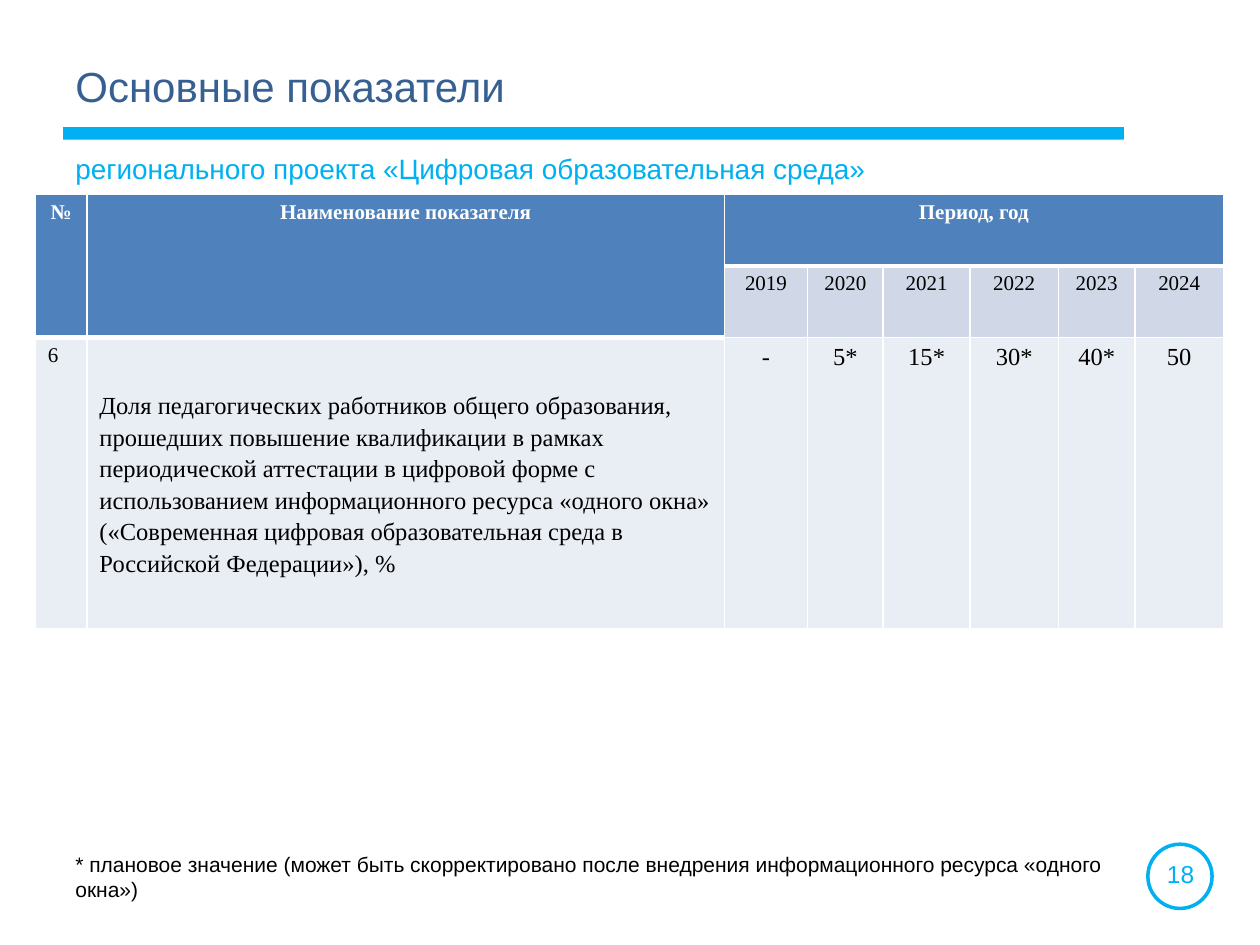
from lxml import etree
from pptx import Presentation
from pptx.dml.color import RGBColor
from pptx.enum.shapes import MSO_SHAPE
from pptx.enum.text import MSO_ANCHOR, PP_ALIGN
from pptx.oxml.ns import qn
from pptx.util import Inches, Pt

RECT, OVAL = MSO_SHAPE.RECTANGLE, MSO_SHAPE.OVAL
LEFT, MID = PP_ALIGN.LEFT, PP_ALIGN.CENTER

# Content
TITLE = "Основные показатели"
SUB = "регионального проекта «Цифровая образовательная среда»"
NOTE = ("* плановое значение (может быть скорректировано после внедрения "
        "информационного ресурса «одного окна»)")
PAGE = "18"
HEADS = ["№", "Наименование показателя", "Период, год"]
YEARS = ["2019", "2020", "2021", "2022", "2023", "2024"]
NAME = ("Доля педагогических работников общего образования, прошедших "
        "повышение квалификации в рамках периодической аттестации в цифровой "
        "форме с использованием информационного ресурса «одного окна» "
        "(«Современная цифровая образовательная среда в Российской "
        "Федерации»), %")
VALUES = ["-", "5*", "15*", "30*", "40*", "50"]
ROWS = [HEADS, ["", ""] + YEARS, ["6", NAME] + VALUES]

THEME = {
    "sans": "Arial", "serif": "Times New Roman",
    "sky": "00B0F0", "navy": "376092", "ink": "000000", "white": "FFFFFF",
    "head": "4F81BD", "band": "D0D8E8", "body": "E9EDF4",
    "title": 24, "sub": 16, "main": 14, "small": 12,
}

# Grid
EDGE = 0.5
COLS = [0.41, 5.06, 0.66, 0.6, 0.69, 0.7, 0.61, 0.7]
HIGH = [0.57, 0.57, 2.31]


def color(key):
    return RGBColor.from_string(THEME[key])


def write(frame, text, size, ink, face="sans", bold=False, align=LEFT):
    frame.word_wrap = True
    para = frame.paragraphs[0]
    para.alignment = align
    run = para.add_run()
    run.text = text
    font = run.font
    font.name, font.size, font.bold = THEME[face], Pt(THEME[size]), bold
    font.color.rgb = color(ink)
    return para


def label(slide, box, *args, **more):
    part = slide.shapes.add_textbox(*map(Inches, box))
    write(part.text_frame, *args, **more)


def border(cell, low):
    props = cell._tc.get_or_add_tcPr()
    for side, width in (("L", 1), ("R", 1), ("B", low)):
        line = etree.SubElement(props, qn("a:ln" + side), w=str(Pt(width)))
        fill = etree.SubElement(line, qn("a:solidFill"))
        etree.SubElement(fill, qn("a:srgbClr"), val=THEME["white"])


def table(slide):
    frame = slide.shapes.add_table(
        len(HIGH), len(COLS), Inches(0.28), Inches(1.54),
        Inches(sum(COLS)), Inches(sum(HIGH)))
    grid = frame.table
    for col, wide in zip(grid.columns, COLS):
        col.width = Inches(wide)
    for row, high in zip(grid.rows, HIGH):
        row.height = Inches(high)

    # Header spans
    for col in (0, 1):
        grid.cell(0, col).merge(grid.cell(1, col))
    grid.cell(0, 2).merge(grid.cell(0, len(COLS) - 1))

    # Borders and fills
    for r in range(len(HIGH)):
        for c in range(len(COLS)):
            cell = grid.cell(r, c)
            top = r == 0 or (r == 1 and c < 2)
            border(cell, 3 if top else 1)
            cell.fill.solid()
            cell.fill.fore_color.rgb = color(
                "head" if top else ("band" if r == 1 else "body"))

    # Text
    for r, row in enumerate(ROWS):
        for c, text in enumerate(row):
            if not text:
                continue
            cell = grid.cell(r, c)
            last = r == 2
            para = write(cell.text_frame, text,
                         "main" if last and c else "small",
                         "ink" if r else "white", "serif", r == 0,
                         LEFT if last and c < 2 else MID)
            if text == NAME:
                cell.vertical_anchor = MSO_ANCHOR.MIDDLE
                cell.margin_left = cell.margin_right = Inches(0.02)
                cell.margin_top = cell.margin_bottom = 0
                para.line_spacing = Pt(18)
                para._p.get_or_add_pPr().set("marL", str(Inches(0.08)))


def main():
    deck = Presentation()
    deck.slide_width, deck.slide_height = Inches(10), Inches(7.5)
    slide = deck.slides.add_slide(deck.slide_layouts[6])

    # Rule under the title
    bar = slide.shapes.add_shape(
        RECT, *map(Inches, (EDGE, 1.01, 8.42, 0.1)))
    bar.shadow.inherit = False
    bar.fill.solid()
    bar.fill.fore_color.rgb = color("sky")
    bar.line.fill.background()

    # Page number in its ring
    ring = slide.shapes.add_shape(
        OVAL, *map(Inches, (9.11, 6.7, 0.51, 0.51)))
    ring.shadow.inherit = False
    ring.fill.background()
    ring.line.color.rgb = color("sky")
    ring.line.width = Pt(2)
    label(slide, (9.08, 6.77, 0.58, 0.34), PAGE, "main", "sky", align=MID)

    # Headings, table and footnote
    label(slide, (EDGE, 1.15, 8.56, 0.49), SUB, "sub", "sky")
    label(slide, (EDGE, 0.43, 7.79, 0.64), TITLE, "title", "navy")
    table(slide)
    label(slide, (EDGE, 6.71, 8.39, 0.51), NOTE, "small", "ink")

    deck.save("out.pptx")


if __name__ == "__main__":
    main()
